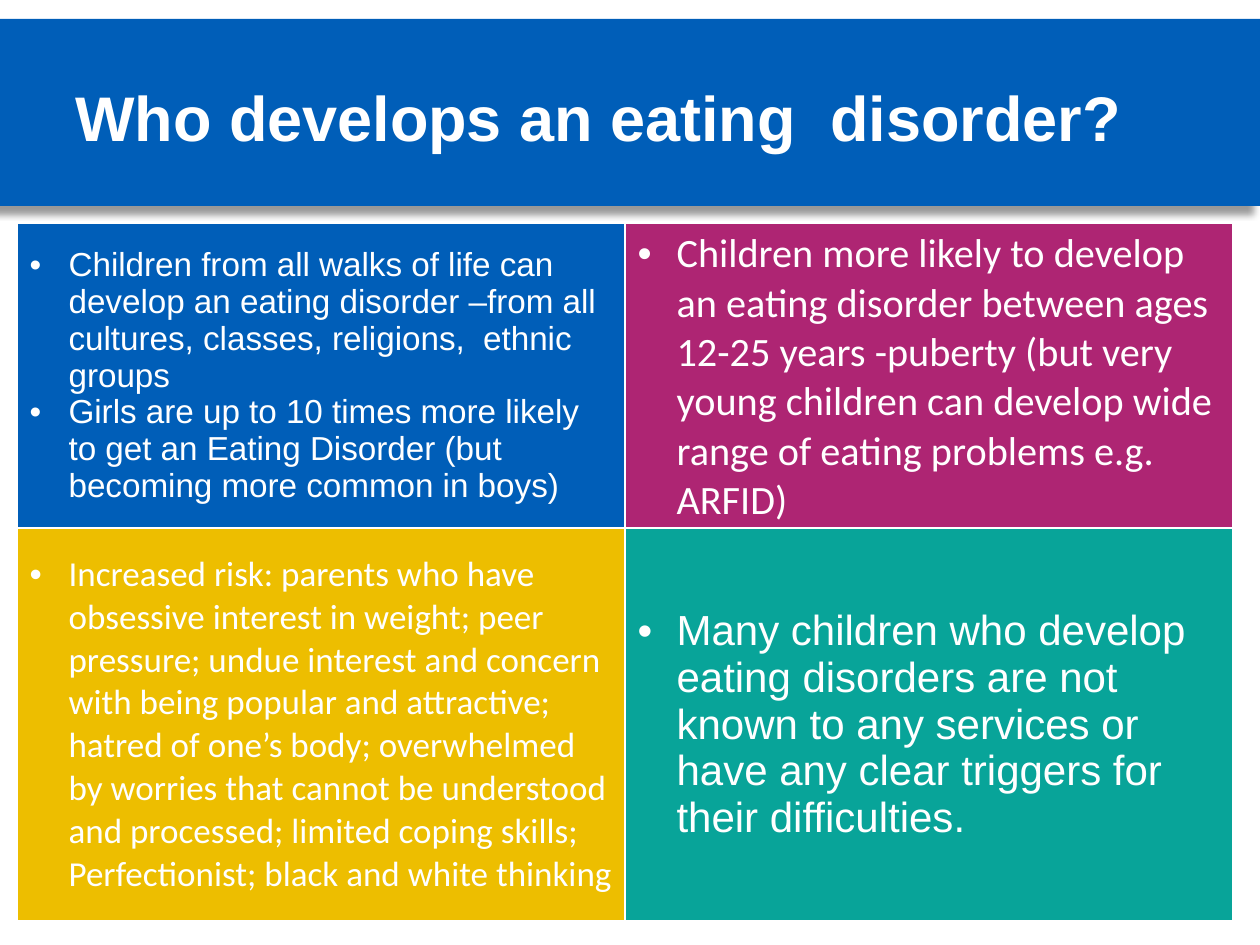
from dataclasses import dataclass

from pptx import Presentation
from pptx.dml.color import RGBColor
from pptx.enum.shapes import MSO_SHAPE
from pptx.enum.text import MSO_ANCHOR
from pptx.oxml import parse_xml
from pptx.oxml.ns import nsdecls
from pptx.util import Pt

PX = 914400 / 126  # EMU in one pixel


@dataclass(frozen=True)
class Theme:
    blue: str = "005EB8"
    plum: str = "AE2573"
    gold: str = "EDBE00"
    teal: str = "08A499"
    white: str = "FFFFFF"
    head: str = "Arial"
    body: str = "Calibri"
    title: int = 36
    small: int = 19
    medium: int = 20
    large: int = 23
    huge: int = 24


THEME = Theme()

# Each cell: fill, font, size, bulleted lines
CELLS = [
    [
        (THEME.blue, THEME.head, THEME.small, [
            "Children from all walks of life can develop an eating disorder "
            "–from all cultures, classes, religions,  ethnic groups",
            "Girls are up to 10 times more likely to get an Eating Disorder "
            "(but becoming more common in boys)",
        ]),
        (THEME.plum, THEME.body, THEME.large, [
            "Children more likely to develop an eating disorder between ages "
            "12-25 years -puberty (but very young children can develop wide "
            "range of eating problems e.g. ARFID)",
        ]),
    ],
    [
        (THEME.gold, THEME.body, THEME.medium, [
            "Increased risk: parents who have obsessive interest in weight; "
            "peer pressure; undue interest and concern with being popular and "
            "attractive; hatred of one’s body; overwhelmed by worries that "
            "cannot be understood and processed; limited coping skills; "
            "Perfectionist; black and white thinking",
        ]),
        (THEME.teal, THEME.head, THEME.huge, [
            "Many children who develop eating disorders are not known to any "
            "services or have any clear triggers for their difficulties.",
        ]),
    ],
]


def px(*vals):
    return [round(v * PX) for v in vals]


def style(para, face, size, bold=False):
    for run in para.runs:
        font = run.font
        font.name, font.size, font.bold = face, Pt(size), bold
        font.color.rgb = RGBColor.from_string(THEME.white)


def add_band(slide, box):
    band = slide.shapes.add_shape(MSO_SHAPE.RECTANGLE, *px(*box))
    band.fill.solid()
    band.fill.fore_color.rgb = RGBColor.from_string(THEME.blue)
    band.line.fill.background()
    # Soft shadow, down and to the left
    band.shadow.inherit = False
    band.element.spPr.effectLst.append(parse_xml(
        f'<a:outerShdw {nsdecls("a")} blurRad="{Pt(4)}" dist="{Pt(6)}" '
        'dir="8100000" algn="tr" rotWithShape="0"><a:srgbClr val="000000">'
        '<a:alpha val="40000"/></a:srgbClr></a:outerShdw>'))


def add_title(slide, box, text):
    frame = slide.shapes.add_textbox(*px(*box)).text_frame
    frame.word_wrap = True
    frame.vertical_anchor = MSO_ANCHOR.MIDDLE
    frame.text = text
    style(frame.paragraphs[0], THEME.head, THEME.title, bold=True)


def add_bullet(para, indent):
    props = para._p.get_or_add_pPr()
    step, = px(indent)
    props.set("marL", str(step))
    props.set("indent", str(-step))
    for tag in ('buFont {} typeface="Arial"', 'buChar {} char="•"'):
        props.append(parse_xml(f'<a:{tag.format(nsdecls("a"))}/>'))


def add_edges(cell):
    props = cell._tc.get_or_add_tcPr()
    for side in "LRTB":
        props.append(parse_xml(
            f'<a:ln{side} {nsdecls("a")} w="{Pt(1)}"><a:solidFill>'
            f'<a:srgbClr val="{THEME.white}"/></a:solidFill></a:ln{side}>'))


def fill_cell(cell, fill, face, size, lines):
    add_edges(cell)
    cell.fill.solid()
    cell.fill.fore_color.rgb = RGBColor.from_string(fill)
    cell.vertical_anchor = MSO_ANCHOR.MIDDLE
    cell.text_frame.text = "\n".join(lines)
    for para in cell.text_frame.paragraphs:
        add_bullet(para, 39)
        style(para, face, size)


def add_grid(slide, left, top, width, heights):
    cols = len(CELLS[0])
    box = px(left, top, width * cols, sum(heights))
    table = slide.shapes.add_table(len(CELLS), cols, *box).table
    for col in table.columns:
        col.width, = px(width)
    for row, height in zip(table.rows, px(*heights)):
        row.height = height
    for r, line in enumerate(CELLS):
        for c, data in enumerate(line):
            fill_cell(table.cell(r, c), *data)


def main():
    deck = Presentation()
    deck.slide_width, deck.slide_height = px(1260, 945)
    slide = deck.slides.add_slide(deck.slide_layouts[6])

    # Heading
    add_band(slide, (-3, 19, 1263, 187))
    add_title(slide, (63, 38, 1134, 157), "Who develops an eating  disorder?")

    # Four facts
    add_grid(slide, 17, 223, 608, (305, 393))

    deck.save("out.pptx")


if __name__ == "__main__":
    main()
